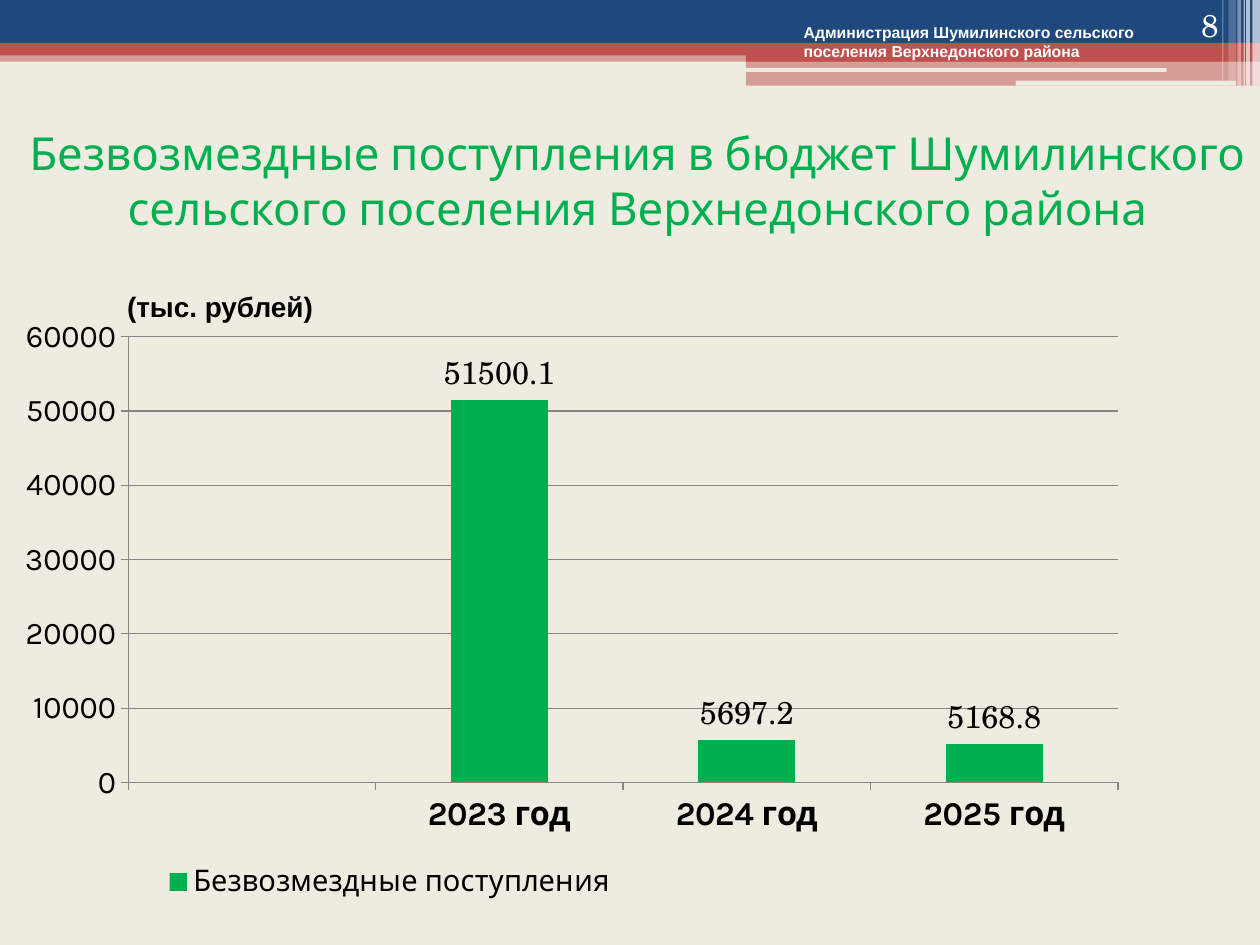
from lxml.etree import SubElement
from pptx import Presentation
from pptx.chart.data import CategoryChartData
from pptx.dml.color import RGBColor
from pptx.enum.chart import XL_CHART_TYPE, XL_LEGEND_POSITION, XL_LABEL_POSITION, XL_TICK_MARK
from pptx.enum.shapes import MSO_SHAPE
from pptx.enum.text import MSO_ANCHOR, MSO_AUTO_SIZE, PP_ALIGN
from pptx.oxml import parse_xml
from pptx.oxml.ns import nsdecls, qn
from pptx.util import Pt

PX = 9144
NAVY, RED, CREAM, WHITE = "1F497D", "C0504D", "EEECE1", "FFFFFF"
GREEN, BLACK, GREY = "00B050", "000000", "868686"
SERIF, SANS, HEADING = "TeX Gyre Schola", "Arial", "Karla"


def emu(*lengths):
    """Turn px lengths into EMU."""
    return [length * PX for length in lengths]


def paint(target, color):
    """Give a fill one solid colour."""
    target.solid()
    target.fore_color.rgb = RGBColor.from_string(color)


def style(font, name, size, color=BLACK, bold=False):
    """Set the face, size, colour and weight of a font."""
    font.name, font.size, font.bold = name, Pt(size), bold
    font.color.rgb = RGBColor.from_string(color)


def add_bar(slide, left, top, width, height, color, opacity=100, kind=MSO_SHAPE.RECTANGLE):
    """Add one borderless bar with the given opacity in percent."""
    bar = slide.shapes.add_shape(kind, *emu(left, top, width, height))
    bar.shadow.inherit = False
    bar.line.fill.background()
    paint(bar.fill, color)
    if opacity < 100:
        tone = bar.fill._xPr.find(qn("a:solidFill"))[0]
        SubElement(tone, qn("a:alpha"), val=str(opacity * 1000))


def write(frame, text, name, size, color, bold=False, align=PP_ALIGN.LEFT, anchor=MSO_ANCHOR.TOP):
    """Fill a text frame with one styled paragraph."""
    frame.word_wrap = True
    frame.auto_size = MSO_AUTO_SIZE.NONE
    frame.vertical_anchor = anchor
    frame.text = text
    paragraph = frame.paragraphs[0]
    paragraph.alignment = align
    style(paragraph.font, name, size, color, bold)


def add_label(slide, box, *args, **kwargs):
    """Add a text box with one styled paragraph."""
    write(slide.shapes.add_textbox(*emu(*box)).text_frame, *args, **kwargs)


def add_header(slide, left, top, width):
    """Draw the header bands, the stripes at their right end and the header texts."""
    right, panel = left + width, left + 592
    add_bar(slide, left, top + 40, width, 9, RED, 50)
    add_bar(slide, left, top, width, 34, NAVY)
    add_bar(slide, left, top + 34, width, 10, RED)
    add_bar(slide, panel, top + 39, right - panel, 10, RED)
    add_bar(slide, panel, top + 48, right - panel, 20, RED, 50)
    for x, y, length, thickness in [(591, 54, 335, 3), (806, 64, 175, 4)]:
        add_bar(slide, left + x, top + y, length, thickness, CREAM, kind=MSO_SHAPE.ROUNDED_RECTANGLE)
    stripes = [(6, 6, 68, 65), (11, 3, 68, 65), (13, 1, 68, 60),
               (18, 3, 68, 40), (25, 6, 64, 20), (30, 1, 64, 30)]
    for offset, thickness, height, opacity in stripes:
        add_bar(slide, right - offset, top, thickness, height, WHITE, opacity)
    add_label(slide, (left + 894, top, 83, 40), "8", SERIF, 18, WHITE,
              align=PP_ALIGN.RIGHT, anchor=MSO_ANCHOR.BOTTOM)
    add_label(slide, (left + 628, top + 13, 311, 40),
              "Администрация Шумилинского сельского поселения Верхнедонского района",
              SANS, 9, WHITE, bold=True)


def add_title(slide, left, top, width, height):
    """Place and format the title placeholder."""
    title = slide.shapes.title
    title.left, title.top, title.width, title.height = emu(left, top, width, height)
    write(title.text_frame,
          "Безвозмездные поступления в бюджет Шумилинского сельского поселения Верхнедонского района",
          HEADING, 26, GREEN, align=PP_ALIGN.CENTER, anchor=MSO_ANCHOR.MIDDLE)


def set_layout(parent, index, x, y, w, h, inner=False):
    """Place a chart part by fractions of the chart area."""
    for old in parent.findall(qn("c:layout")):
        parent.remove(old)
    target = '<c:layoutTarget val="inner"/>' if inner else ""
    parent.insert(index, parse_xml(
        f'<c:layout {nsdecls("c")}><c:manualLayout>{target}'
        '<c:xMode val="edge"/><c:yMode val="edge"/>'
        f'<c:x val="{x}"/><c:y val="{y}"/><c:w val="{w}"/><c:h val="{h}"/>'
        '</c:manualLayout></c:layout>'))


def add_receipts_chart(slide, left, top, width, height):
    """Add the column chart of receipts by year with its unit label."""
    receipts = CategoryChartData()
    receipts.categories = ["", "2023 год", "2024 год", "2025 год"]
    receipts.add_series("Безвозмездные поступления", [None, 51500.1, 5697.2, 5168.8])
    chart = slide.shapes.add_chart(
        XL_CHART_TYPE.COLUMN_CLUSTERED, *emu(left, top, width, height), receipts).chart
    chart.has_title = False
    style(chart.font, SERIF, 18)

    years, amounts = chart.category_axis, chart.value_axis
    style(years.tick_labels.font, HEADING, 19, bold=True)
    style(amounts.tick_labels.font, HEADING, 18)
    amounts.minimum_scale, amounts.maximum_scale, amounts.major_unit = 0, 60000, 10000
    amounts.has_major_gridlines = True
    for axis in (years, amounts):
        axis.major_tick_mark = XL_TICK_MARK.OUTSIDE
        axis.minor_tick_mark = XL_TICK_MARK.NONE
    for rule in (years.format.line, amounts.format.line, amounts.major_gridlines.format.line):
        paint(rule.fill, GREY)
        rule.width = Pt(0.75)

    plot = chart.plots[0]
    plot.gap_width = 155
    plot.vary_by_categories = False
    columns = plot.series[0]
    paint(columns.format.fill, GREEN)
    labels = columns.data_labels
    labels.show_value = True
    labels.position = XL_LABEL_POSITION.OUTSIDE_END
    style(labels.font, SERIF, 18)

    chart.has_legend = True
    legend = chart.legend
    legend.position = XL_LEGEND_POSITION.BOTTOM
    legend.include_in_layout = False
    style(legend.font, HEADING, 17)
    set_layout(legend._element, 1, 0.1, 0.92, 0.42, 0.08)
    plot_area = chart._chartSpace.chart.plotArea
    set_layout(plot_area, 0, 0.068, 0.045, 0.915, 0.748, inner=True)
    add_label(slide, (left + 71, top - 21, 181, 37), "(тыс. рублей)", SANS, 16, BLACK, bold=True)


def main():
    """Build the slide and save it."""
    deck = Presentation()
    deck.slide_width, deck.slide_height = emu(1000, 750)
    slide = deck.slides.add_slide(deck.slide_layouts[5])
    paint(slide.background.fill, CREAM)
    add_header(slide, 0, 0, 1000)
    add_title(slide, 12, 84, 988, 117)
    add_receipts_chart(slide, 20, 246, 882, 473)
    deck.save("out.pptx")


if __name__ == "__main__":
    main()
